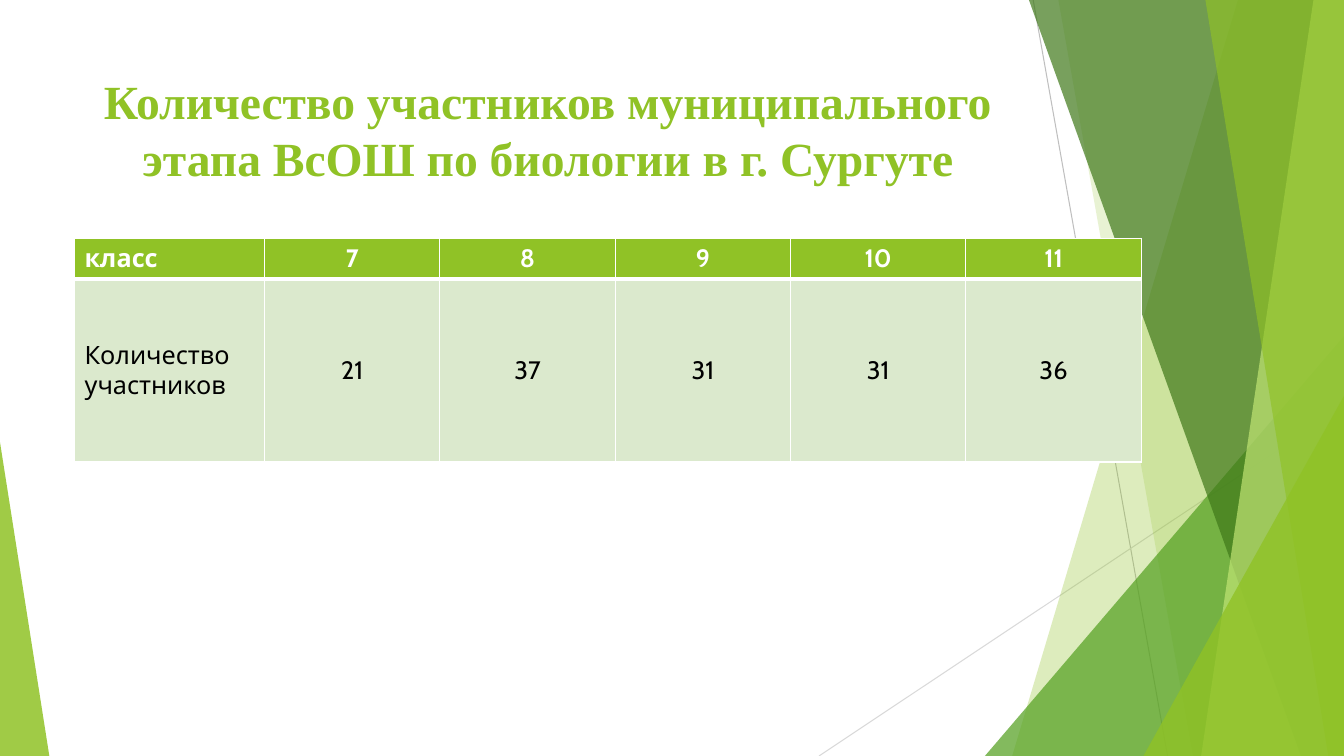
from dataclasses import dataclass

from lxml import etree
from pptx import Presentation
from pptx.dml.color import RGBColor
from pptx.enum.shapes import MSO_CONNECTOR, MSO_SHAPE
from pptx.enum.text import MSO_ANCHOR, MSO_AUTO_SIZE, PP_ALIGN
from pptx.oxml.ns import qn
from pptx.util import Emu, Pt

STRAIGHT = MSO_CONNECTOR.STRAIGHT
TRIANGLE = MSO_SHAPE.ISOSCELES_TRIANGLE
TOP, MIDDLE = MSO_ANCHOR.TOP, MSO_ANCHOR.MIDDLE
LEFT, CENTER = PP_ALIGN.LEFT, PP_ALIGN.CENTER
NO_AUTOFIT = MSO_AUTO_SIZE.NONE

EMU_PER_PX = 9525
WIDTH, HEIGHT = 1280, 720
TITLE_ONLY = 5


@dataclass(frozen=True)
class Theme:
    accent: str = "90C226"
    green: str = "54A021"
    dark: str = "3F7819"
    light: str = "C0E474"
    body_fill: str = "DBE9CD"
    white: str = "FFFFFF"
    black: str = "000000"
    gray: str = "BFBFBF"
    pale_gray: str = "D9D9D9"
    title_font: str = "Times New Roman"
    table_font: str = "Cabin"
    title_size: float = 34
    table_size: float = 18
    hairline: float = 0.75
    border: float = 1
    header_border: float = 3


THEME = Theme()

TITLE = "Количество участников муниципального этапа ВсОШ по биологии в г. Сургуте"
ROWS = [
    ["класс", "7", "8", "9", "10", "11"],
    ["Количество участников", "21", "37", "31", "31", "36"],
]
COLUMN_WIDTHS = [181] + [167] * 5
ROW_HEIGHTS = [39, 174]


def px(value):
    return Emu(value * EMU_PER_PX)


def rgb(color):
    return RGBColor.from_string(color)


def apply_format(target, values):
    for name, value in values.items():
        setattr(target, name, value)


def fill_shape(shape, color, opacity):
    shape.shadow.inherit = False
    shape.line.fill.background()
    shape.fill.solid()
    shape.fill.fore_color.rgb = rgb(color)
    color_element = shape.fill._xPr.find(qn("a:solidFill"))[0]
    etree.SubElement(color_element, qn("a:alpha"), val=str(opacity * 1000))


def add_line(slide, start, end, color):
    line = slide.shapes.add_connector(STRAIGHT, *map(px, start + end))
    line.line.color.rgb = rgb(color)
    line.line.width = Pt(THEME.hairline)
    etree.SubElement(line._element.spPr, qn("a:effectLst"))


def add_facet(slide, top_left, bottom_left, color, opacity):
    builder = slide.shapes.build_freeform(top_left, 0, scale=EMU_PER_PX)
    builder.add_line_segments([(WIDTH, 0), (WIDTH, HEIGHT), (bottom_left, HEIGHT)])
    fill_shape(builder.convert_to_shape(), color, opacity)


def add_triangle(slide, left, top, width, apex, color, opacity):
    box = map(px, (left, top, width, HEIGHT - top))
    shape = slide.shapes.add_shape(TRIANGLE, *box)
    shape.adjustments[0] = apex
    fill_shape(shape, color, opacity)


def add_background(slide):
    add_line(slide, (984, 0), (1112, HEIGHT), THEME.gray)
    add_line(slide, (WIDTH, 387), (780, HEIGHT), THEME.pale_gray)
    add_facet(slide, 1179, 964, THEME.accent, 30)
    add_facet(slide, 1008, 1136, THEME.accent, 20)
    add_triangle(slide, 938, 320, 342, 1, THEME.green, 72)
    add_facet(slide, 980, 1239, THEME.dark, 70)
    add_facet(slide, 1251, 1144, THEME.light, 70)
    add_facet(slide, 1148, 1265, THEME.accent, 65)
    add_triangle(slide, 1089, 377, 191, 1, THEME.accent, 80)
    add_triangle(slide, 0, 421, 47, 0, THEME.accent, 85)


def write_text(text_frame, text, alignment, color, font_format):
    paragraph = text_frame.paragraphs[0]
    paragraph.alignment = alignment
    run = paragraph.add_run()
    run.text = text
    apply_format(run.font, font_format)
    run.font.color.rgb = rgb(color)


def add_title(slide):
    title = slide.shapes.title
    box = {"left": 71, "top": 64, "width": 902, "height": 138}
    apply_format(title, {name: px(value) for name, value in box.items()})
    apply_format(title.text_frame, {
        "word_wrap": True, "auto_size": NO_AUTOFIT, "vertical_anchor": TOP,
    })
    write_text(title.text_frame, TITLE, CENTER, THEME.accent, {
        "name": THEME.title_font, "size": Pt(THEME.title_size), "bold": True,
    })
    slide.shapes._spTree.append(title._element)


def set_borders(cell, bottom_width):
    properties = cell._tc.get_or_add_tcPr()
    widths = {"lnL": THEME.border, "lnR": THEME.border,
              "lnT": THEME.border, "lnB": bottom_width}
    for position, (side, width) in enumerate(widths.items()):
        border = etree.Element(qn(f"a:{side}"), w=str(Pt(width)))
        fill = etree.SubElement(border, qn("a:solidFill"))
        etree.SubElement(fill, qn("a:srgbClr"), val=THEME.white)
        properties.insert(position, border)


def format_cell(cell, text, is_header, is_label):
    cell.fill.solid()
    cell.fill.fore_color.rgb = rgb(THEME.accent if is_header else THEME.body_fill)
    cell.vertical_anchor = TOP if is_header else MIDDLE
    set_borders(cell, THEME.header_border if is_header else THEME.border)
    color = THEME.white if is_header else THEME.black
    write_text(cell.text_frame, text, LEFT if is_label else CENTER, color, {
        "name": THEME.table_font, "size": Pt(THEME.table_size), "bold": is_header,
    })


def add_participants_table(slide):
    box = map(px, (71, 227, sum(COLUMN_WIDTHS), sum(ROW_HEIGHTS)))
    table = slide.shapes.add_table(len(ROWS), len(COLUMN_WIDTHS), *box).table
    for column, width in zip(table.columns, COLUMN_WIDTHS):
        column.width = px(width)
    for row_index, (row, height) in enumerate(zip(ROWS, ROW_HEIGHTS)):
        table.rows[row_index].height = px(height)
        for column_index, text in enumerate(row):
            cell = table.cell(row_index, column_index)
            format_cell(cell, text, row_index == 0, column_index == 0)


def main():
    presentation = Presentation()
    presentation.slide_width = px(WIDTH)
    presentation.slide_height = px(HEIGHT)
    slide = presentation.slides.add_slide(presentation.slide_layouts[TITLE_ONLY])
    add_background(slide)
    add_title(slide)
    add_participants_table(slide)
    presentation.save("out.pptx")


if __name__ == "__main__":
    main()
